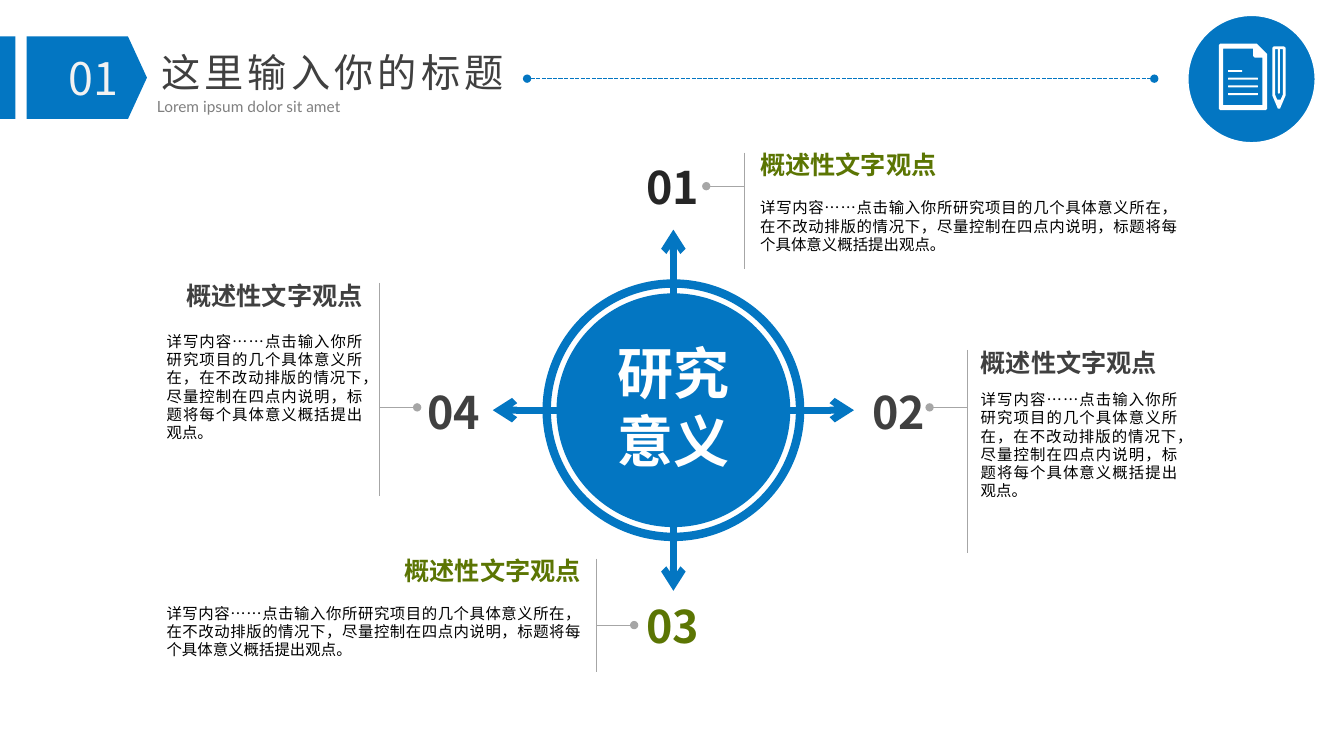
from lxml import etree
from pptx import Presentation
from pptx import util as u
from pptx.dml.color import RGBColor
from pptx.enum import shapes, text
from pptx.oxml.ns import qn

Pt = u.Pt
AL = text.PP_ALIGN
SHAPE = shapes.MSO_SHAPE
BLUE, WHITE, GREEN, DARK, GREY = "0376C2", "FFFFFF", "5B7503", "404040", "A6A6A6"
CJK = "Noto Sans CJK SC"
HEADING = "概述性文字观点"
DETAIL = ("详写内容……点击输入你所研究项目的几个具体意义所在，在不改动排版的情况下，"
          "尽量控制在四点内说明，标题将每个具体意义概括提出观点。")


def color(hex_value):
    return RGBColor.from_string(hex_value)


def paint(sp, fill=None, line=None, width=1):
    sp.shadow.inherit = False
    if fill:
        sp.fill.solid()
        sp.fill.fore_color.rgb = color(fill)
    else:
        sp.fill.background()
    if line:
        sp.line.color.rgb = color(line)
        sp.line.width = Pt(width)
    else:
        sp.line.fill.background()
    return sp


def add_shape(slide, kind, x, y, w, h, **style):
    sp = slide.shapes.add_shape(kind, Pt(x), Pt(y), Pt(w), Pt(h))
    return paint(sp, **style)


def add_outline(slide, contours, **style):
    """Closed polygons in one shape; later contours cut holes."""
    first, *holes = contours
    fb = slide.shapes.build_freeform(Pt(first[0][0]), Pt(first[0][1]))
    fb.add_line_segments([(Pt(x), Pt(y)) for x, y in first[1:]])
    for hole in holes:
        fb.move_to(Pt(hole[0][0]), Pt(hole[0][1]))
        fb.add_line_segments([(Pt(x), Pt(y)) for x, y in hole[1:]])
    return paint(fb.convert_to_shape(), **style)


def add_line(slide, x1, y1, x2, y2, hex_value, width, dash=None, head=None, tail=None):
    """Line from (x1, y1); head is the end mark there, tail the one at (x2, y2)."""
    cx = slide.shapes.add_connector(shapes.MSO_CONNECTOR.STRAIGHT, Pt(x1), Pt(y1), Pt(x2), Pt(y2))
    cx.line.color.rgb = color(hex_value)
    cx.line.width = Pt(width)
    ln = cx.line._get_or_add_ln()
    for tag, value in (("prstDash", dash), ("headEnd", head), ("tailEnd", tail)):
        if value:
            key = "val" if tag == "prstDash" else "type"
            etree.SubElement(ln, qn(f"a:{tag}")).set(key, value)
    etree.SubElement(cx._element.spPr, qn("a:effectLst"))


def add_text(slide, words, x, y, w, h, size=18, font=CJK, fill=DARK, bold=False, align=AL.LEFT,
             anchor=text.MSO_ANCHOR.TOP, inset=(0, 0), wrap=True, spacing=None, tracking=None):
    tf = slide.shapes.add_textbox(Pt(x), Pt(y), Pt(w), Pt(h)).text_frame
    tf.word_wrap = wrap
    tf.auto_size = text.MSO_AUTO_SIZE.SHAPE_TO_FIT_TEXT
    tf.vertical_anchor = anchor
    tf.margin_left = tf.margin_right = Pt(inset[0])
    tf.margin_top = tf.margin_bottom = Pt(inset[1])
    p = tf.paragraphs[0]
    p.alignment = align
    if spacing:
        p.line_spacing = Pt(spacing)
    r = p.add_run()
    r.text = words
    r.font.size, r.font.name, r.font.bold = Pt(size), font, bold
    r.font.color.rgb = color(fill)
    rPr = r.font._element
    etree.SubElement(rPr, qn("a:ea")).set("typeface", CJK)
    if tracking:
        rPr.set("spc", str(tracking * 100))


def header(slide, x, y, h):
    add_shape(slide, SHAPE.RECTANGLE, x, y, 11, h, fill=BLUE)
    tag = add_shape(slide, SHAPE.PENTAGON, x + 19, y, 86, h, fill=BLUE)
    tag.adjustments[0] = 0.23
    add_text(slide, "01", x + 29, y + 6.5, 76, 32, size=32, fill="F2F2F2",
             align=AL.CENTER, inset=(7.2, 3.6))
    add_text(slide, "这里输入你的标题", x + 105, y + 4.5, 265, 41, size=28, font="Lato",
             align=AL.CENTER, anchor=text.MSO_ANCHOR.MIDDLE, inset=(7.2, 3.6),
             wrap=False, tracking=3)
    add_text(slide, "Lorem ipsum dolor sit amet", x + 105, y + 39.5, 265, 21, size=11,
             font="Lato", fill="808080", align=AL.JUSTIFY, inset=(7.2, 3.6))
    add_line(slide, x + 376.5, y + 30.2, x + 824.5, y + 30.2, BLUE, 1,
             dash="sysDash", head="oval", tail="oval")


def document_icon(slide, x, y, d):
    add_shape(slide, SHAPE.OVAL, x, y, d, d, fill=BLUE, line=WHITE)
    for row, w in enumerate((10, 21.2, 21.2, 21.2)):
        add_shape(slide, SHAPE.ROUNDED_RECTANGLE, x + 28.8, y + 39 + 5.5 * row, w, 1.4, fill=WHITE)
    page = [(0, 1), (1, 0), (27, 0), (34.5, 7.5), (34.5, 46.5), (33.5, 47.5), (1, 47.5), (0, 46.5)]
    page_hole = [(3, 44), (3, 3.5), (24.5, 3.5), (24.5, 9), (25.5, 10), (31, 10), (31, 44)]
    pencil = [(0, 1), (1, 0), (8.5, 0), (9.5, 1), (9.5, 35), (5.5, 44.5), (4, 44.5), (0, 35)]
    pencil_hole = [(2, 2), (4, 2), (4, 33), (4.75, 34), (5.5, 33), (5.5, 2),
                   (7.5, 2), (7.5, 34.5), (6, 38), (3.5, 38), (2, 34.5)]
    for dx, dy, contours in ((22.2, 20.2, (page, page_hole)), (60.3, 22.2, (pencil, pencil_hole))):
        add_outline(slide, [[(x + dx + px, y + dy + py) for px, py in c] for c in contours],
                    fill=WHITE)


def hub(slide, x, y, d):
    """Ringed disc with an arrow pointing out on each side."""
    add_shape(slide, SHAPE.OVAL, x, y, d, d, line=BLUE, width=6)
    add_shape(slide, SHAPE.OVAL, x + 7, y + 7, d - 14, d - 14, fill=BLUE)
    cx, cy = x + d / 2, y + d / 2
    for dx, dy in ((0, -1), (1, 0), (0, 1), (-1, 0)):
        add_line(slide, cx + 72 * dx, cy + 72 * dy, cx + 129 * dx, cy + 129 * dy,
                 BLUE, 5, tail="arrow")
    add_text(slide, "研究意义", cx - 60.5, y + 36, 121, 104, size=40, fill=WHITE, bold=True,
             align=AL.CENTER, inset=(7.2, 3.6))


def callout(slide, box, number, body_dy, rule_gap, stub_dy, number_at, hue, number_hue, side):
    """Heading and detail in box, with a rule, stub and number on its side (-1 left, 1 right)."""
    x, y, w, h = box
    add_text(slide, HEADING, x, y, w, 22, fill=hue, bold=True,
             align=AL.LEFT if side < 0 else AL.RIGHT)
    add_text(slide, DETAIL, x, y + body_dy, w, h - body_dy, size=11, fill="000000",
             align=AL.JUSTIFY, spacing=13)
    rule_x = x - rule_gap if side < 0 else x + w + rule_gap
    add_line(slide, rule_x, y + 2, rule_x, y + h, GREY, 0.75)
    add_line(slide, rule_x + 27 * side, y + stub_dy, rule_x, y + stub_dy, GREY, 0.75, head="oval")
    add_text(slide, number, *number_at, 48, 39, size=32, fill=number_hue, bold=True,
             align=AL.CENTER)


def main():
    prs = Presentation()
    prs.slide_width, prs.slide_height = Pt(960), Pt(540)
    slide = prs.slides.add_slide(prs.slide_layouts[6])
    header(slide, 0, 26, 59)
    document_icon(slide, 848.5, 11, 91)
    hub(slide, 390.5, 202.5, 181)
    callout(slide, (543, 107, 298, 85), "01", 35, 11.5, 26, (456.5, 114), GREEN, "262626", -1)
    callout(slide, (700.5, 248, 140.5, 147), "02", 31, 9.5, 43, (618, 274.5), DARK, DARK, -1)
    callout(slide, (119, 397, 296, 83), "03", 34.5, 11, 49.5, (456.5, 427.5), GREEN, GREEN, 1)
    callout(slide, (119, 200, 140, 154), "04", 37.5, 12, 91, (300, 274.5), DARK, DARK, 1)
    prs.save("out.pptx")


if __name__ == "__main__":
    main()
